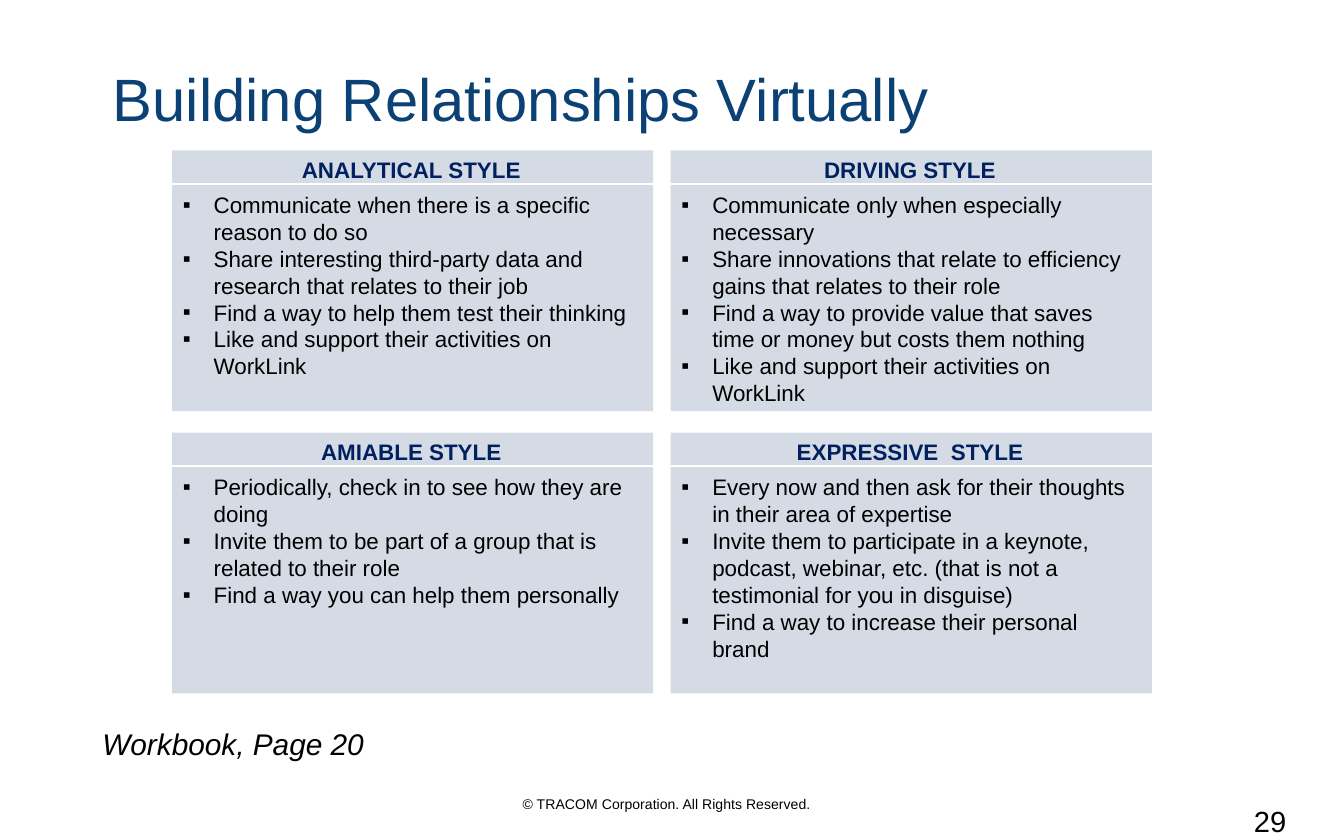
from dataclasses import dataclass

from lxml.etree import SubElement
from pptx import Presentation
from pptx.dml.color import RGBColor
from pptx.enum.shapes import MSO_CONNECTOR, MSO_SHAPE
from pptx.enum.text import MSO_ANCHOR, PP_ALIGN
from pptx.oxml.ns import qn
from pptx.util import Inches, Pt

FONT = "Arial"
BLACK, WHITE, NAVY, TITLE_BLUE, PANEL = "000000", "FFFFFF", "002060", "0C4176", "D5DBE5"
GRID_LEFT, GRID_TOP = 1.28, 1.12
PANEL_WIDTH, PANEL_HEIGHT = 3.58, 1.94
COLUMN_STEP, ROW_STEP = 3.71, 2.1
HEADER_HEIGHT = 0.25
BULLET_INDENT = 0.23


@dataclass(frozen=True)
class StylePanel:
    column: int
    row: int
    heading: str
    tips: tuple[str, ...]


@dataclass(frozen=True)
class Label:
    text: str
    left: float
    top: float
    width: float
    height: float
    size: float
    italic: bool = False


PANELS = (
    StylePanel(0, 0, "ANALYTICAL STYLE", (
        "Communicate when there is a specific reason to do so",
        "Share interesting third-party data and research that relates to their job",
        "Find a way to help them test their thinking",
        "Like and support their activities on WorkLink",
    )),
    StylePanel(1, 0, "DRIVING STYLE", (
        "Communicate only when especially necessary",
        "Share innovations that relate to efficiency gains that relates to their role",
        "Find a way to provide value that saves time or money but costs them nothing",
        "Like and support their activities on WorkLink",
    )),
    StylePanel(0, 1, "AMIABLE STYLE", (
        "Periodically, check in to see how they are doing",
        "Invite them to be part of a group that is related to their role",
        "Find a way you can help them personally",
    )),
    StylePanel(1, 1, "EXPRESSIVE  STYLE", (
        "Every now and then ask for their thoughts in their area of expertise",
        "Invite them to participate in a keynote, podcast, webinar, etc. "
        "(that is not a testimonial for you in disguise)",
        "Find a way to increase their personal brand",
    )),
)

LABELS = (
    Label("© TRACOM Corporation. All Rights Reserved.", 3.26, 5.87, 3.4, 0.23, 7.5),
    Label("Workbook, Page 20", 0.61, 5.35, 2.25, 0.37, 16, italic=True),
    Label("29", 9.07, 5.93, 0.76, 0.33, 15.6),
)


def color(value: str) -> RGBColor:
    """Turn a hex string into a colour."""
    return RGBColor.from_string(value)


def format_runs(paragraph, size: float, fill: str, bold: bool = False, italic: bool = False) -> None:
    """Format every run of a paragraph."""
    for run in paragraph.runs:
        run.font.name = FONT
        run.font.size = Pt(size)
        run.font.bold = bold
        run.font.italic = italic
        run.font.color.rgb = color(fill)


def add_bullet(paragraph) -> None:
    """Give a paragraph a square bullet with a hanging indent."""
    properties = paragraph._p.get_or_add_pPr()
    properties.set("marL", str(Inches(BULLET_INDENT)))
    properties.set("indent", str(-Inches(BULLET_INDENT)))
    SubElement(properties, qn("a:buFont"), typeface=FONT)
    SubElement(properties, qn("a:buChar"), char="▪")


def set_title(slide, text: str) -> None:
    """Place and format the title placeholder."""
    title = slide.shapes.title
    title.left, title.top, title.width, title.height = map(Inches, (0.74, 0.41, 6.65, 0.78))
    title.text_frame.text = text
    title.text_frame.vertical_anchor = MSO_ANCHOR.MIDDLE
    title.text_frame.margin_bottom = Inches(0.11)
    paragraph = title.text_frame.paragraphs[0]
    paragraph.alignment = PP_ALIGN.LEFT
    paragraph.line_spacing = 0.85
    format_runs(paragraph, 32, TITLE_BLUE)


def add_panel(slide, panel: StylePanel) -> None:
    """Draw one style panel with its heading, rule and tips."""
    left = GRID_LEFT + panel.column * COLUMN_STEP
    top = GRID_TOP + panel.row * ROW_STEP
    shape = slide.shapes.add_shape(
        MSO_SHAPE.RECTANGLE, *map(Inches, (left, top, PANEL_WIDTH, PANEL_HEIGHT)))
    shape.shadow.inherit = False
    shape.fill.solid()
    shape.fill.fore_color.rgb = color(PANEL)
    shape.line.fill.background()

    frame = shape.text_frame
    frame.word_wrap = True
    frame.vertical_anchor = MSO_ANCHOR.TOP
    frame.margin_left, frame.margin_right = Inches(0.08), Inches(0.1)
    frame.margin_top = frame.margin_bottom = Inches(0.04)
    frame.text = "\n".join((panel.heading, *panel.tips))
    heading, *tips = frame.paragraphs
    heading.alignment = PP_ALIGN.CENTER
    heading.space_after = Pt(4.5)
    format_runs(heading, 12, NAVY, bold=True)
    for tip in tips:
        tip.alignment = PP_ALIGN.LEFT
        add_bullet(tip)
        format_runs(tip, 12, BLACK)

    rule_top = top + HEADER_HEIGHT
    rule = slide.shapes.add_connector(
        MSO_CONNECTOR.STRAIGHT, *map(Inches, (left, rule_top, left + PANEL_WIDTH, rule_top)))
    rule.line.color.rgb = color(WHITE)
    rule.line.width = Pt(1)
    SubElement(rule._element.spPr, qn("a:effectLst"))


def add_label(slide, label: Label) -> None:
    """Draw one centred line of text."""
    box = slide.shapes.add_textbox(
        *map(Inches, (label.left, label.top, label.width, label.height)))
    frame = box.text_frame
    frame.word_wrap = True
    frame.text = label.text
    paragraph = frame.paragraphs[0]
    paragraph.alignment = PP_ALIGN.CENTER
    format_runs(paragraph, label.size, BLACK, italic=label.italic)


def main() -> None:
    """Build the slide and save it."""
    presentation = Presentation()
    presentation.slide_width, presentation.slide_height = Inches(10), Inches(6.25)
    slide = presentation.slides.add_slide(presentation.slide_layouts.get_by_name("Title Only"))
    set_title(slide, "Building Relationships Virtually")
    for panel in PANELS:
        add_panel(slide, panel)
    for label in LABELS:
        add_label(slide, label)
    presentation.save("out.pptx")


if __name__ == "__main__":
    main()
